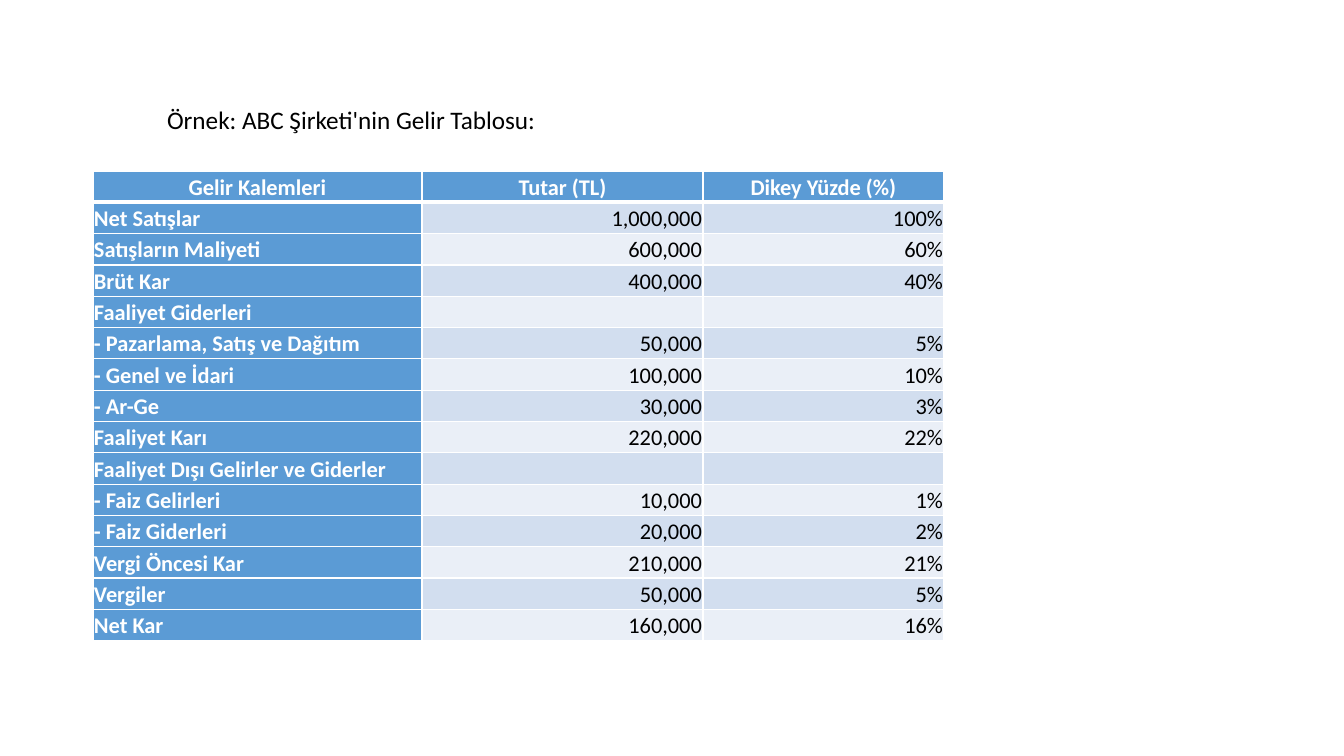
from lxml.etree import SubElement
from pptx import Presentation
from pptx.dml.color import RGBColor
from pptx.enum.text import MSO_ANCHOR, PP_ALIGN
from pptx.oxml.ns import qn
from pptx.util import Emu, Pt

TITLE = "Örnek: ABC Şirketi'nin Gelir Tablosu:"
ROWS = [
    ("Gelir Kalemleri", "Tutar (TL)", "Dikey Yüzde (%)"),
    ("Net Satışlar", "1,000,000", "100%"),
    ("Satışların Maliyeti", "600,000", "60%"),
    ("Brüt Kar", "400,000", "40%"),
    ("Faaliyet Giderleri", "", ""),
    ("- Pazarlama, Satış ve Dağıtım", "50,000", "5%"),
    ("- Genel ve İdari", "100,000", "10%"),
    ("- Ar-Ge", "30,000", "3%"),
    ("Faaliyet Karı", "220,000", "22%"),
    ("Faaliyet Dışı Gelirler ve Giderler", "", ""),
    ("- Faiz Gelirleri", "10,000", "1%"),
    ("- Faiz Giderleri", "20,000", "2%"),
    ("Vergi Öncesi Kar", "210,000", "21%"),
    ("Vergiler", "50,000", "5%"),
    ("Net Kar", "160,000", "16%"),
]
COLORS = {"head": "5B9BD5", "odd": "D2DEEF", "even": "EAEFF7",
          "white": "FFFFFF", "black": "000000"}
FONT = "Calibri"
COL_WIDTHS = [329, 281, 241]
ROW_HEIGHT = 31
TABLE_LEFT, TABLE_TOP = 93, 171
TITLE_BOX = (157, 99, 393, 40)


def px(n):
    return Emu(round(n * 914400 / 100.8))


def rgb(name):
    return RGBColor.from_string(COLORS[name])


def style_text(p, size, color, align, bold=False):
    p.alignment = align
    p.font.name = FONT
    p.font.size = Pt(size)
    p.font.bold = bold
    p.font.color.rgb = rgb(color)


def add_borders(cell, row):
    tcPr = cell._tc.get_or_add_tcPr()
    widths = {"lnL": 1, "lnR": 1, "lnT": 3 if row == 1 else 1, "lnB": 3 if row == 0 else 1}
    for tag, width in widths.items():
        ln = SubElement(tcPr, qn(f"a:{tag}"), w=str(Pt(width)))
        SubElement(SubElement(ln, qn("a:solidFill")), qn("a:srgbClr"), val=COLORS["white"])


def fill_cell(cell, text, row, col):
    header = row == 0 or col == 0
    add_borders(cell, row)
    cell.fill.solid()
    cell.fill.fore_color.rgb = rgb("head" if header else "odd" if row % 2 else "even")
    cell.margin_left = cell.margin_right = cell.margin_top = cell.margin_bottom = px(1)
    cell.vertical_anchor = MSO_ANCHOR.MIDDLE
    cell.text = text
    p = cell.text_frame.paragraphs[0]
    p.line_spacing = 1.07
    align = PP_ALIGN.CENTER if row == 0 else PP_ALIGN.LEFT if col == 0 else PP_ALIGN.RIGHT
    style_text(p, 16, "white" if header else "black", align, header)


def main():
    prs = Presentation()
    prs.slide_width, prs.slide_height = px(1344), px(756)
    s = prs.slides.add_slide(prs.slide_layouts[5])

    title = s.shapes.title
    title.left, title.top, title.width, title.height = map(px, TITLE_BOX)
    tf = title.text_frame
    tf.text = TITLE
    tf.word_wrap = False
    tf.vertical_anchor = MSO_ANCHOR.TOP
    style_text(tf.paragraphs[0], 18, "black", PP_ALIGN.LEFT)

    table = s.shapes.add_table(len(ROWS), len(COL_WIDTHS), px(TABLE_LEFT), px(TABLE_TOP),
                               px(sum(COL_WIDTHS)), px(ROW_HEIGHT * len(ROWS))).table
    for column, width in zip(table.columns, COL_WIDTHS):
        column.width = px(width)
    for i, values in enumerate(ROWS):
        table.rows[i].height = px(ROW_HEIGHT)
        for j, text in enumerate(values):
            fill_cell(table.cell(i, j), text, i, j)

    prs.save("out.pptx")


if __name__ == "__main__":
    main()
